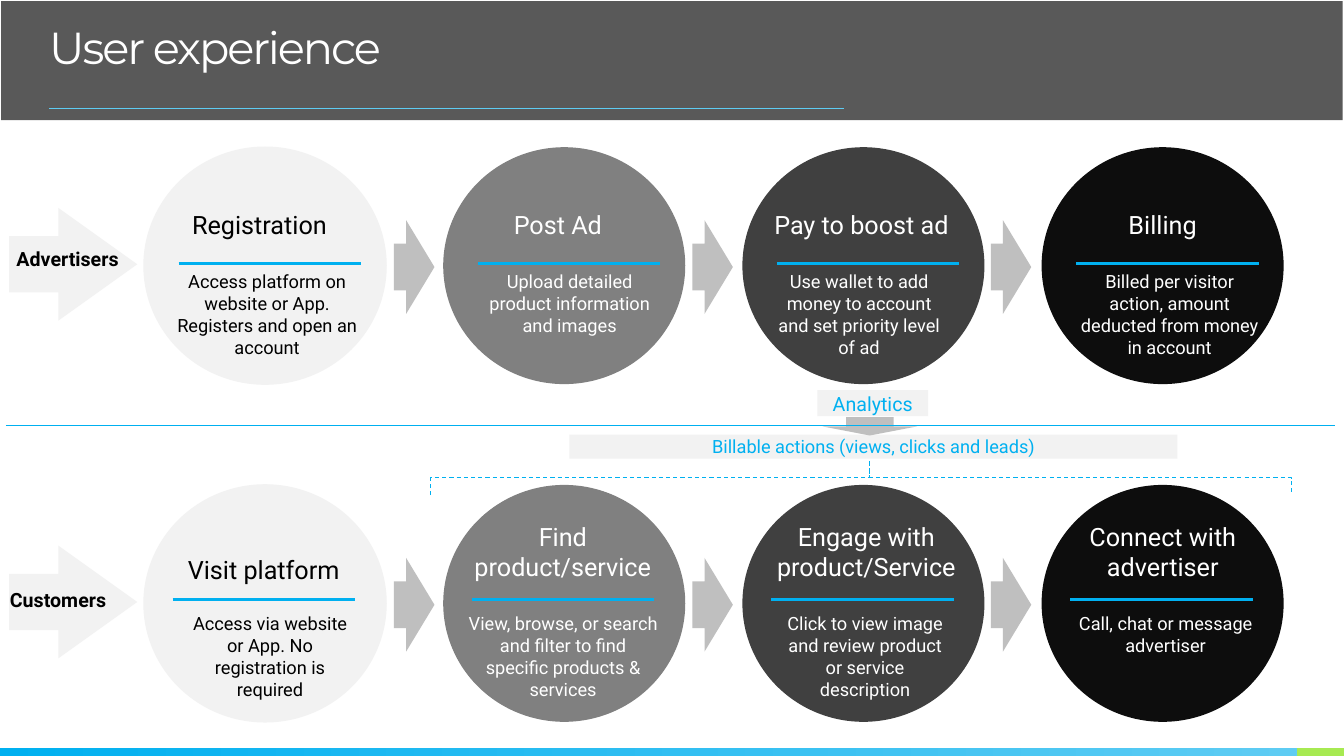
from lxml import etree
from pptx import Presentation
from pptx import util as u
from pptx.dml.color import RGBColor
from pptx.enum import dml, shapes, text
from pptx.oxml.ns import qn

BLACK = RGBColor(0x00, 0x00, 0x00)
WHITE = RGBColor(0xFF, 0xFF, 0xFF)
PALE = RGBColor(0xF2, 0xF2, 0xF2)
SILVER = RGBColor(0xBF, 0xBF, 0xBF)
GREY = RGBColor(0x80, 0x80, 0x80)
CHARCOAL = RGBColor(0x40, 0x40, 0x40)
INK = RGBColor(0x0D, 0x0D, 0x0D)
BLUE = RGBColor(0x00, 0xB0, 0xF0)
SKY = RGBColor(0x5E, 0xCC, 0xF3)
LIME = RGBColor(0xA7, 0xEA, 0x52)

KIND = shapes.MSO_SHAPE
CENTER = text.PP_ALIGN.CENTER
LEFT = text.PP_ALIGN.LEFT
COLUMN_PITCH = 7.54
STEP_COLOURS = [(PALE, BLACK), (GREY, WHITE), (CHARCOAL, WHITE), (INK, WHITE)]

# Each step: heading, heading left, heading top, description, its left, its width
ADVERTISER_STEPS = [
    ("Registration", 4.29, 5.28,
     "Access platform on website or App. Registers and open an account", 4.29, 4.88),
    ("Post Ad", 11.81, 5.28,
     "Upload detailed product information and images", 12.12, 4.47),
    ("Pay to boost ad", 19.46, 5.28,
     "Use wallet to add money to account and set priority level of ad", 19.53, 4.24),
    ("Billing", 27.05, 5.28,
     "Billed per visitor action, amount deducted from money in account", 27.2, 4.55),
]
CUSTOMER_STEPS = [
    ("Visit platform", 4.04, 13.97,
     "Access via website or App. No registration is required", 4.8, 4.01),
    ("Find product/service", 11.58, 13.13,
     "View, browse, or search and filter to find specific products & services",
     11.79, 4.8),
    ("Engage with product/Service", 19.23, 13.13,
     "Click to view image and review product or service description", 19.69, 4.22),
    ("Connect with advertiser", 26.7, 13.13,
     "Call, chat or message advertiser", 27.1, 4.55),
]


def cm_box(*lengths):
    return [u.Cm(length) for length in lengths]


def add_block(slide, kind, box, fill=None, adjustments=(), rotation=0):
    """Add a preset shape without shadow or outline; no fill when fill is None."""
    block = slide.shapes.add_shape(kind, *cm_box(*box))
    block.shadow.inherit = False
    block.line.fill.background()
    if fill is None:
        block.fill.background()
    else:
        block.fill.solid()
        block.fill.fore_color.rgb = fill
    for index, value in enumerate(adjustments):
        block.adjustments[index] = value
    block.rotation = rotation
    return block


def add_block_arrow(slide, box, fill):
    add_block(slide, KIND.RIGHT_ARROW, box, fill, (0.5, 0.7))


def add_rule(slide, left, top, length, colour, points):
    rule = slide.shapes.add_connector(
        shapes.MSO_CONNECTOR.STRAIGHT, *cm_box(left, top, left + length, top))
    rule.line.color.rgb = colour
    rule.line.width = u.Pt(points)
    etree.SubElement(rule._element.spPr, qn("a:effectLst"))


def write(frame, words, size, colour, align=CENTER, bold=False, space=(10, 5)):
    """Fill a text frame that has no margins with one Roboto paragraph."""
    frame.word_wrap = True
    frame.margin_left = frame.margin_right = 0
    frame.margin_top = frame.margin_bottom = 0
    paragraph = frame.paragraphs[0]
    paragraph.text = words
    paragraph.alignment = align
    paragraph.space_before, paragraph.space_after = map(u.Pt, space)
    paragraph.font.name = "Roboto"
    paragraph.font.size = u.Pt(size)
    paragraph.font.bold = bold
    paragraph.font.color.rgb = colour


def add_label(slide, box, words, size, colour, **style):
    label = slide.shapes.add_textbox(*cm_box(*box))
    write(label.text_frame, words, size, colour, **style)


def add_tag(slide, box, words, size):
    tag = add_block(slide, KIND.RECTANGLE, box, PALE)
    write(tag.text_frame, words, size, BLUE, space=(6, 6))
    tag.text_frame.vertical_anchor = text.MSO_ANCHOR.MIDDLE


def add_footer(slide):
    band = add_block(slide, KIND.RECTANGLE, (0, 18.85, 32.69, 0.2), BLUE)
    band.fill.gradient()
    band.fill.gradient_angle = 0
    for stop, colour, position in zip(band.fill.gradient_stops, (BLUE, SKY), (0, 1)):
        stop.color.rgb = colour
        stop.position = position
    add_block(slide, KIND.RECTANGLE, (32.69, 18.85, 1.18, 0.2), LIME)


def add_header(slide):
    header = add_block(slide, KIND.RECTANGLE, (0.03, 0.03, 33.81, 3), BLACK)
    black = header._element.spPr.find(qn("a:solidFill"))[0]
    etree.SubElement(black, qn("a:alpha"), val="65000")

    title = slide.shapes.add_textbox(*cm_box(0.99, 0.53, 19.99, 2.01)).text_frame
    title.word_wrap = True
    paragraph = title.paragraphs[0]
    paragraph.line_spacing = 0.9
    run = paragraph.add_run()
    run.text = "User experience"
    run.font.name = "Montserrat"
    run.font.size = u.Pt(32)
    run.font.color.rgb = WHITE
    run._r.get_or_add_rPr().set("spc", "-150")
    add_rule(slide, 1.24, 2.72, 20.02, SKY, 0.5)


def add_journey(slide, steps, circle_top, rule_left, rule_top, heading_width,
                description_top):
    """Draw one row of circled steps with arrows between them."""
    add_block_arrow(slide, (0.23, circle_top + 1.53, 3.23, 2.84), PALE)
    for column, (step, colours) in enumerate(zip(steps, STEP_COLOURS)):
        heading, heading_left, heading_top, description, left, width = step
        fill, ink = colours
        offset = column * COLUMN_PITCH
        circle = add_block(slide, KIND.OVAL, (3.63 + offset, circle_top, 6.1, 5.97), fill)
        if fill == PALE:
            circle.line.color.rgb = PALE
            circle.line.width = u.Pt(1)
        add_label(slide, (heading_left, heading_top, heading_width, 1), heading, 18, ink)
        add_rule(slide, rule_left + offset, rule_top, 4.6, BLUE, 2.25)
        add_label(slide, (left, description_top, width, 2.36), description, 13, ink)
    for gap in range(len(steps) - 1):
        add_block_arrow(slide, (9.93 + gap * 7.52, circle_top + 1.84, 1.02, 2.36), SILVER)


def add_analytics(slide):
    """Draw the divider and the tags linking customer actions to billing."""
    add_tag(slide, (14.35, 10.95, 15.32, 0.61), "Billable actions (views, clicks and leads)", 13)
    add_tag(slide, (20.6, 9.83, 2.79, 0.66), "Analytics", 14)
    add_block(slide, KIND.RIGHT_ARROW, (21.69, 9.55, 0.46, 2.39), SILVER, rotation=90)
    add_rule(slide, 0.15, 10.72, 33.5, BLUE, 0.5)
    brace = add_block(slide, KIND.LEFT_BRACE, (21.26, 1.19, 0.89, 21.69),
                      adjustments=(0, 0.49), rotation=90)
    brace.line.color.rgb = BLUE
    brace.line.width = u.Pt(0.75)
    brace.line.dash_style = dml.MSO_LINE.DASH


def main():
    deck = Presentation()
    deck.slide_width, deck.slide_height = cm_box(33.87, 19.05)
    slide = deck.slides.add_slide(deck.slide_layouts[6])
    add_footer(slide)
    add_header(slide)
    add_journey(slide, ADVERTISER_STEPS, 3.71, 4.5, 6.63, 4.5, 6.81)
    add_label(slide, (0.13, 6.22, 3.15, 0.71), "Advertisers", 14, BLACK, bold=True)
    add_journey(slide, CUSTOMER_STEPS, 12.22, 4.35, 15.11, 5.21, 15.44)
    add_label(slide, (0.25, 14.81, 3.15, 0.61), "Customers", 14, BLACK,
              align=LEFT, bold=True)
    add_analytics(slide)
    deck.save("out.pptx")


if __name__ == "__main__":
    main()
